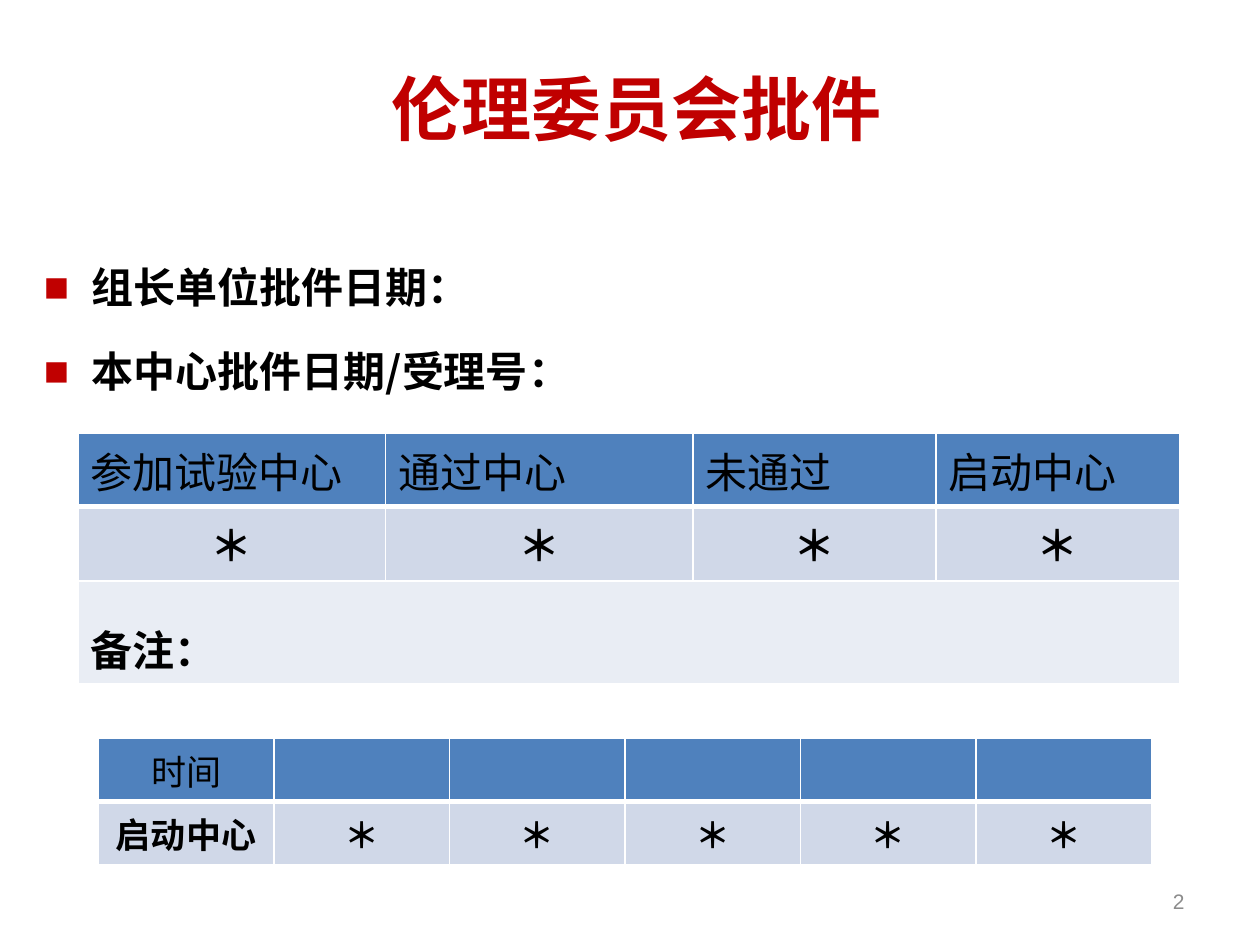
from lxml import etree
from pptx import Presentation
from pptx.dml.color import RGBColor
from pptx.enum.text import MSO_ANCHOR, PP_ALIGN
from pptx.oxml.ns import qn
from pptx.util import Inches, Pt

LEFT, CENTER, RIGHT = PP_ALIGN.LEFT, PP_ALIGN.CENTER, PP_ALIGN.RIGHT
MIDDLE = MSO_ANCHOR.MIDDLE
RED = RGBColor(0xC0, 0x00, 0x00)
BLACK = RGBColor(0x00, 0x00, 0x00)
GRAY = RGBColor(0x8C, 0x8C, 0x8C)
WHITE = RGBColor(0xFF, 0xFF, 0xFF)
HEADER_BLUE = RGBColor(0x4F, 0x81, 0xBD)
BAND_BLUE = RGBColor(0xD0, 0xD8, 0xE8)
PALE_BLUE = RGBColor(0xE9, 0xED, 0xF4)
CHINESE_FONT = "Noto Sans CJK SC"


def write(paragraph, text, size, font="Calibri", color=BLACK, bold=False,
          align=LEFT, line_spacing=1.0):
    paragraph.alignment = align
    paragraph.line_spacing = line_spacing
    run = paragraph.add_run()
    run.text = text
    run.font.size = Pt(size)
    run.font.name = font
    run.font.bold = bold
    run.font.color.rgb = color
    if font == CHINESE_FONT:
        etree.SubElement(run.font._element, qn("a:ea"), typeface=font)


def style_cell(cell, fill, bottom_width=1):
    """Give a cell white borders and a solid fill."""
    properties = cell._tc.get_or_add_tcPr()
    for side, width in (("L", 1), ("R", 1), ("T", 1), ("B", bottom_width)):
        line = etree.SubElement(properties, qn(f"a:ln{side}"), w=str(Pt(width)))
        line_fill = etree.SubElement(line, qn("a:solidFill"))
        etree.SubElement(line_fill, qn("a:srgbClr"), val=str(WHITE))
    cell.fill.solid()
    cell.fill.fore_color.rgb = fill


presentation = Presentation()
presentation.slide_width = Inches(10)
presentation.slide_height = Inches(7.5)
slide = presentation.slides.add_slide(presentation.slide_layouts[5])

title = slide.shapes.title
title.left, title.top = Inches(1.09), Inches(0.23)
title.width, title.height = Inches(7.92), Inches(1.25)
title.text_frame.vertical_anchor = MIDDLE
write(title.text_frame.paragraphs[0], "伦理委员会批件", 40, font=CHINESE_FONT,
      color=RED, bold=True, align=CENTER)

# Approval dates
dates = slide.shapes.add_textbox(Inches(0.25), Inches(1.83), Inches(8.34), Inches(1.84))
dates.text_frame.word_wrap = True
for index, text in enumerate(("组长单位批件日期：", "本中心批件日期/受理号：")):
    paragraph = dates.text_frame.paragraphs[0] if index == 0 else dates.text_frame.add_paragraph()
    write(paragraph, text, 24, font=CHINESE_FONT, bold=True, line_spacing=1.5)
    paragraph.space_before = Pt(4.8)
    properties = paragraph._p.get_or_add_pPr()
    properties.set("marL", str(Inches(0.38)))
    properties.set("indent", str(-Inches(0.38)))
    bullet_color = etree.SubElement(properties, qn("a:buClr"))
    etree.SubElement(bullet_color, qn("a:srgbClr"), val=str(RED))
    etree.SubElement(properties, qn("a:buFont"), typeface="Arial")
    etree.SubElement(properties, qn("a:buChar"), char="■")

# Centre counts
centers = slide.shapes.add_table(3, 4, Inches(0.62), Inches(3.44),
                                 Inches(8.74), Inches(1.99)).table
for column, width in zip(centers.columns, (2.44, 2.44, 1.93, 1.93)):
    column.width = Inches(width)
for row, height in zip(centers.rows, (0.58, 0.59, 0.82)):
    row.height = Inches(height)
for index, header in enumerate(("参加试验中心", "通过中心", "未通过", "启动中心")):
    style_cell(centers.cell(0, index), HEADER_BLUE, bottom_width=3)
    style_cell(centers.cell(1, index), BAND_BLUE)
    style_cell(centers.cell(2, index), PALE_BLUE)
    write(centers.cell(0, index).text_frame.paragraphs[0], header, 24)
    write(centers.cell(1, index).text_frame.paragraphs[0], "＊", 24, bold=True, align=CENTER)
centers.cell(2, 0).merge(centers.cell(2, 3))
write(centers.cell(2, 0).text_frame.paragraphs[0], "备注：", 24, bold=True, line_spacing=1.5)

# Start-up timeline
timeline = slide.shapes.add_table(2, 6, Inches(0.78), Inches(5.86),
                                  Inches(8.36), Inches(1)).table
for index in range(6):
    header, value = ("时间", "启动中心") if index == 0 else ("", "＊")
    style_cell(timeline.cell(0, index), HEADER_BLUE, bottom_width=3)
    style_cell(timeline.cell(1, index), BAND_BLUE)
    if header:
        write(timeline.cell(0, index).text_frame.paragraphs[0], header, 20, align=CENTER)
    write(timeline.cell(1, index).text_frame.paragraphs[0], value, 20, bold=True, align=CENTER)

page_number = slide.shapes.add_textbox(Inches(7.17), Inches(6.95), Inches(2.33), Inches(0.4))
page_number.text_frame.word_wrap = True
page_number.text_frame.vertical_anchor = MIDDLE
write(page_number.text_frame.paragraphs[0], "2", 12, font="Arial", color=GRAY, align=RIGHT)

presentation.save("out.pptx")
